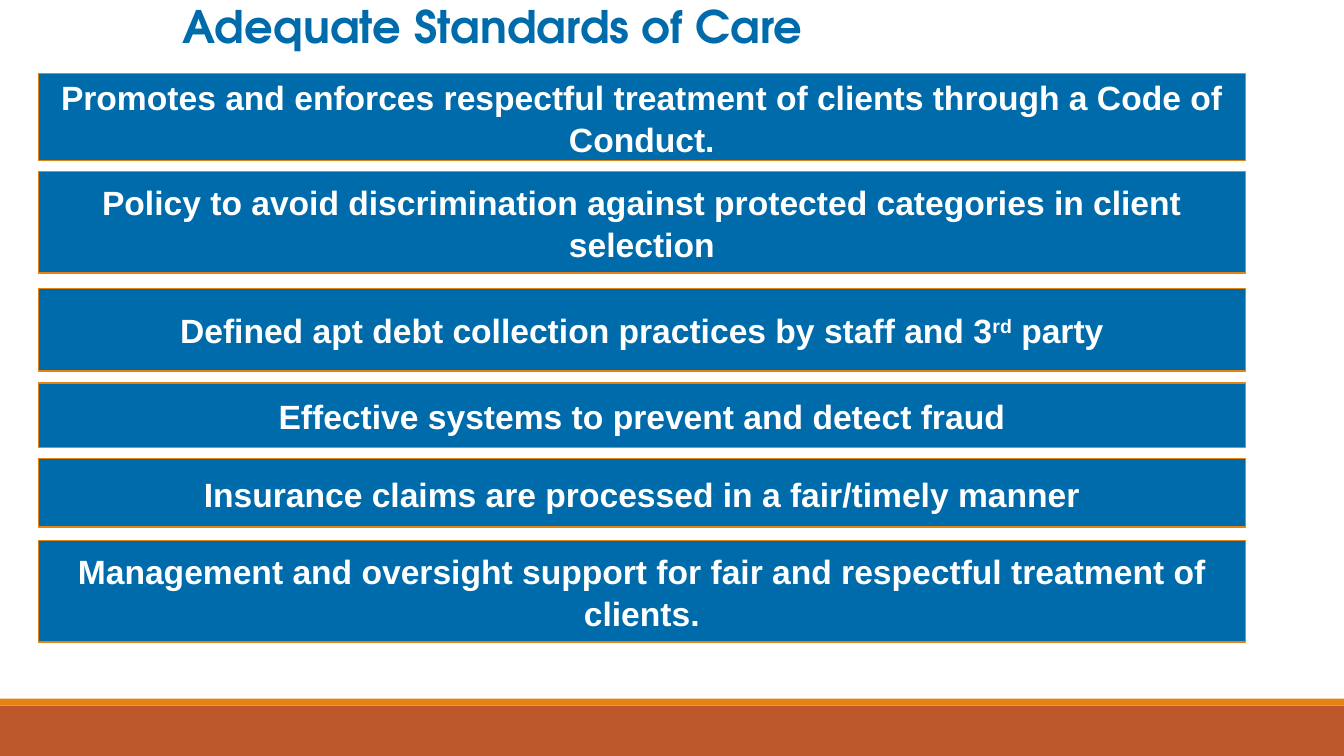
"""Build the slide on adequate standards of care."""
from dataclasses import dataclass

import pptx
import pptx.dml.color
import pptx.enum.shapes
import pptx.enum.text
import pptx.util

SLIDE_WIDTH = pptx.util.Inches(13.33)
SLIDE_HEIGHT = pptx.util.Inches(7.5)
BLUE, ORANGE, RUST, WHITE = "006BAA", "E48312", "BD582C", "FFFFFF"
STANDARD_LEFT, STANDARD_WIDTH = 2.85, 89.8


@dataclass(frozen=True)
class Area:
    """Place on the slide, in percent of its width and height."""

    left: float
    top: float
    width: float
    height: float

    def lengths(self) -> tuple[int, int, int, int]:
        """Return left, top, width and height as slide lengths."""
        return (
            round(self.left * SLIDE_WIDTH / 100),
            round(self.top * SLIDE_HEIGHT / 100),
            round(self.width * SLIDE_WIDTH / 100),
            round(self.height * SLIDE_HEIGHT / 100),
        )


@dataclass(frozen=True)
class Standard:
    """One standard of care: its row and its wording around a superscript."""

    top: float
    height: float
    wording: str
    ordinal: str = ""
    ending: str = ""


STANDARDS = [
    Standard(9.73, 11.47, "Promotes and enforces respectful treatment of clients through a Code of Conduct."),
    Standard(22.67, 13.47, "Policy to avoid discrimination against protected categories in client selection"),
    Standard(38.13, 10.93, "Defined apt debt collection practices by staff and 3", "rd", " party"),
    Standard(50.67, 8.53, "Effective systems to prevent and detect fraud"),
    Standard(60.67, 9.07, "Insurance claims are processed in a fair/timely manner"),
    Standard(71.47, 13.47, "Management and oversight support for fair and respectful treatment of clients."),
]
FOOTER_BANDS = [(Area(0, 93.33, 100, 6.67), RUST), (Area(0, 92.4, 100, 0.93), ORANGE)]


def color(value: str) -> pptx.dml.color.RGBColor:
    """Turn a hex string into a colour."""
    return pptx.dml.color.RGBColor.from_string(value)


def style_font(paragraph, name: str, size: float, fill: str) -> None:
    """Set a bold font on a whole paragraph."""
    font = paragraph.font
    font.name, font.size, font.bold = name, pptx.util.Pt(size), True
    font.color.rgb = color(fill)


def add_bar(slide, area: Area, fill: str, outline: str | None = None):
    """Add a flat rectangle, outlined if a colour is given."""
    bar = slide.shapes.add_shape(pptx.enum.shapes.MSO_SHAPE.RECTANGLE, *area.lengths())
    bar.shadow.inherit = False
    bar.fill.solid()
    bar.fill.fore_color.rgb = color(fill)
    if outline:
        bar.line.color.rgb = color(outline)
        bar.line.width = pptx.util.Pt(1)
    else:
        bar.line.fill.background()
    return bar


def add_standard(slide, standard: Standard) -> None:
    """Add the bar that states one standard."""
    area = Area(STANDARD_LEFT, standard.top, STANDARD_WIDTH, standard.height)
    frame = add_bar(slide, area, BLUE, ORANGE).text_frame
    frame.word_wrap = True
    frame.vertical_anchor = pptx.enum.text.MSO_ANCHOR.MIDDLE
    paragraph = frame.paragraphs[0]
    paragraph.alignment = pptx.enum.text.PP_ALIGN.CENTER
    paragraph.line_spacing = 1.05
    style_font(paragraph, "Arial", 24, WHITE)
    paragraph.add_run().text = standard.wording
    if standard.ordinal:
        raised = paragraph.add_run()
        raised.text = standard.ordinal
        raised.font._element.set("baseline", "30000")
        paragraph.add_run().text = standard.ending


def set_title(slide, wording: str) -> None:
    """Place and format the slide's title."""
    title = slide.shapes.title
    title.left, title.top, title.width, title.height = Area(12.83, -0.8, 74.72, 8.27).lengths()
    frame = title.text_frame
    frame.text = wording
    frame.word_wrap = True
    frame.auto_size = pptx.enum.text.MSO_AUTO_SIZE.NONE
    frame.vertical_anchor = pptx.enum.text.MSO_ANCHOR.MIDDLE
    paragraph = frame.paragraphs[0]
    paragraph.alignment = pptx.enum.text.PP_ALIGN.LEFT
    style_font(paragraph, "TeX Gyre Adventor", 32, BLUE)


def main() -> None:
    """Build and save the presentation."""
    presentation = pptx.Presentation()
    presentation.slide_width, presentation.slide_height = SLIDE_WIDTH, SLIDE_HEIGHT
    slide = presentation.slides.add_slide(presentation.slide_layouts.get_by_name("Title Only"))
    for area, fill in FOOTER_BANDS:
        add_bar(slide, area, fill)
    set_title(slide, "Adequate Standards of Care")
    for standard in STANDARDS:
        add_standard(slide, standard)
    presentation.save("out.pptx")


if __name__ == "__main__":
    main()
